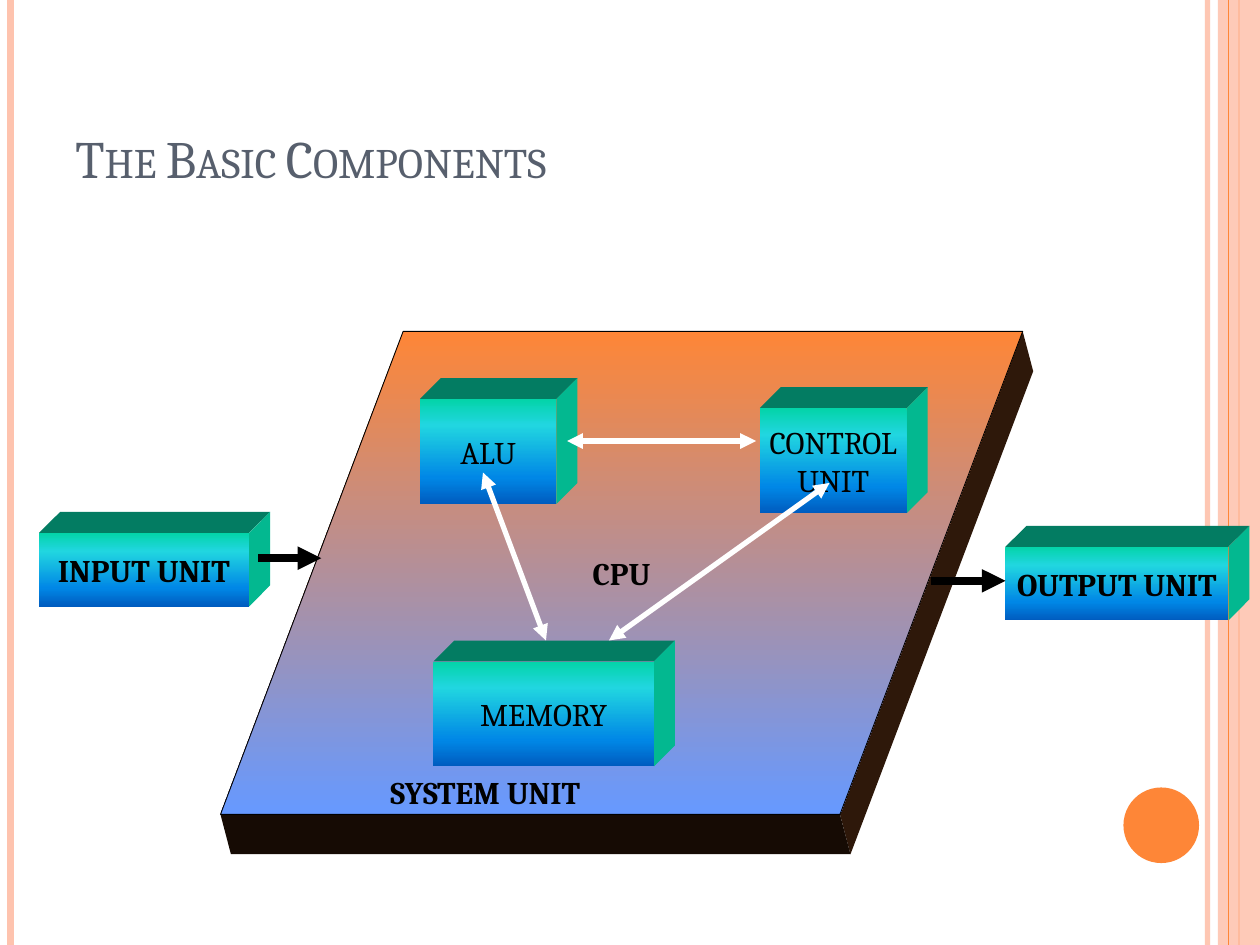
from dataclasses import dataclass

from lxml import etree
from pptx import Presentation
from pptx.dml.color import RGBColor
from pptx.enum.shapes import MSO_CONNECTOR, MSO_SHAPE
from pptx.enum.text import MSO_ANCHOR, PP_ALIGN
from pptx.oxml.ns import qn
from pptx.util import Inches, Pt

STRAIGHT = MSO_CONNECTOR.STRAIGHT
RECTANGLE, OVAL = MSO_SHAPE.RECTANGLE, MSO_SHAPE.OVAL
MIDDLE, BOTTOM, TOP = MSO_ANCHOR.MIDDLE, MSO_ANCHOR.BOTTOM, MSO_ANCHOR.TOP
LEFT, CENTER = PP_ALIGN.LEFT, PP_ALIGN.CENTER
COLUMNS, ROWS = 120, 90
SLIDE_WIDTH, SLIDE_HEIGHT = Inches(10), Inches(7.5)


@dataclass(frozen=True)
class Theme:
    """Colours, gradients and type sizes of the slide."""
    font: str = "Cambria"
    title_size: int = 30
    label_size: int = 18
    title: str = "575F6D"
    ink: str = "000000"
    link: str = "FFFFFF"
    accent: str = "FE8637"
    pale: str = "FEC3AE"
    block_front: tuple = ((0, "03D4A8"), (25, "21D6E0"), (75, "0087E6"), (100, "005CBF"))
    block_top: str = "037C62"
    block_side: str = "03B890"
    platform_face: tuple = ((0, "FE8637"), (100, "6699FF"))
    platform_side: str = "2E180A"
    platform_front: str = "160B04"


THEME = Theme()


def across(columns):
    """Convert grid columns to a slide length."""
    return round(SLIDE_WIDTH * columns / COLUMNS)


def down(rows):
    """Convert grid rows to a slide length."""
    return round(SLIDE_HEIGHT * rows / ROWS)


def place(box):
    """Convert a grid box to left, top, width and height."""
    left, top, width, height = box
    return across(left), down(top), across(width), down(height)


def set_alpha(properties, percent):
    """Make the first colour inside the properties partly transparent."""
    color = next(properties.iter(qn("a:srgbClr")))
    etree.SubElement(color, qn("a:alpha"), val=str(percent * 1000))


def paint(shape, fill, outline=None):
    """Fill a shape with a colour or vertical gradient, without shadow."""
    shape.shadow.inherit = False
    if isinstance(fill, str):
        shape.fill.solid()
        shape.fill.fore_color.rgb = RGBColor.from_string(fill)
    else:
        shape.fill.gradient()
        shape.fill.gradient_angle = 270
        stops = next(shape.element.spPr.iter(qn("a:gsLst")))
        for stop in list(stops):
            stops.remove(stop)
        for position, color in fill:
            stop = etree.SubElement(stops, qn("a:gs"), pos=str(position * 1000))
            etree.SubElement(stop, qn("a:srgbClr"), val=color)
    if outline:
        shape.line.color.rgb = RGBColor.from_string(outline)
        shape.line.width = Pt(0.5)
    else:
        shape.line.fill.background()


def write(shape, text, size, color, bold=False, align=CENTER, anchor=MIDDLE, wrap=False):
    """Put formatted text into a shape."""
    frame = shape.text_frame
    frame.text = text
    frame.word_wrap = wrap
    frame.vertical_anchor = anchor
    for paragraph in frame.paragraphs:
        paragraph.alignment = align
        for run in paragraph.runs:
            run.font.name = THEME.font
            run.font.size = Pt(size)
            run.font.bold = bold
            run.font.color.rgb = RGBColor.from_string(color)


def add_polygon(slide, points, fill, outline=None):
    """Draw a closed outline through grid points."""
    corners = [(across(x), down(y)) for x, y in points]
    builder = slide.shapes.build_freeform(*corners[0])
    builder.add_line_segments(corners[1:], close=True)
    shape = builder.convert_to_shape()
    paint(shape, fill, outline)
    return shape


def add_line(slide, start, end, color, width, arrows=()):
    """Draw a straight line with triangles at the named ends."""
    line = slide.shapes.add_connector(
        STRAIGHT, across(start[0]), down(start[1]), across(end[0]), down(end[1]))
    line.line.color.rgb = RGBColor.from_string(color)
    line.line.width = Pt(width)
    properties = line.line._get_or_add_ln()
    for arrow in arrows:
        etree.SubElement(properties, qn(f"a:{arrow}"), type="triangle")
    etree.SubElement(line.element.spPr, qn("a:effectLst"))
    return line


def add_decoration(slide, box):
    """Draw the vertical stripes and the disc at the slide edges."""
    left, top, width, height = box

    def stripe(column, color, weight):
        return add_line(slide, (left + column, top), (left + column, top + height), color, weight)

    set_alpha(stripe(115, THEME.pale, 3).element.spPr, 93)
    stripe(1, THEME.pale, 4.5)
    stripe(118, THEME.accent, 1.5)
    band = slide.shapes.add_shape(RECTANGLE, *place((left + width - 4, top, 4, height)))
    paint(band, THEME.pale)
    set_alpha(band.element.spPr, 87)
    stripe(117, THEME.accent, 0.75)
    disc = slide.shapes.add_shape(OVAL, *place((left + 107, top + 75, 7.2, 7.2)))
    paint(disc, THEME.accent)


def add_title(slide, box, text):
    """Write the title in small capitals at the foot of its box."""
    title = slide.shapes.add_textbox(*place(box))
    write(title, text, THEME.title_size, THEME.title, align=LEFT, anchor=BOTTOM, wrap=True)
    for run in title.text_frame.paragraphs[0].runs:
        run.font._element.set("cap", "small")


def add_block(slide, box, text, bold=False, depth=2):
    """Draw a labelled block with its top and right side in relief."""
    left, top, width, height = box
    right, bottom = left + width, top + height
    add_polygon(slide, [(left, top), (left + depth, top - depth),
                        (right + depth, top - depth), (right, top)], THEME.block_top)
    add_polygon(slide, [(right, top), (right + depth, top - depth),
                        (right + depth, bottom - depth), (right, bottom)], THEME.block_side)
    front = slide.shapes.add_shape(RECTANGLE, *place(box))
    paint(front, THEME.block_front)
    write(front, text, THEME.label_size, THEME.ink, bold)


def add_platform(slide, box, text, slant=17.4, shift=1, depth=3.8):
    """Draw the slanted system board with its two visible edges."""
    left, top, width, height = box
    right, bottom = left + width, top + height
    add_polygon(slide, [(right, top), (right + shift, top + depth),
                        (right - slant + shift, bottom + depth), (right - slant, bottom)],
                THEME.platform_side)
    add_polygon(slide, [(left, bottom), (right - slant, bottom),
                        (right - slant + shift, bottom + depth), (left + shift, bottom + depth)],
                THEME.platform_front)
    face = add_polygon(slide, [(left + slant, top), (right, top), (right - slant, bottom),
                               (left, bottom)], THEME.platform_face, THEME.ink)
    write(face, text, THEME.label_size, THEME.ink, bold=True)


def add_caption(slide, box, text):
    """Write a bold caption at the top left of its box."""
    caption = slide.shapes.add_textbox(*place(box))
    write(caption, text, THEME.label_size, THEME.ink, True, LEFT, TOP, True)


def main():
    """Build and save the slide."""
    presentation = Presentation()
    presentation.slide_width, presentation.slide_height = SLIDE_WIDTH, SLIDE_HEIGHT
    slide = presentation.slides.add_slide(presentation.slide_layouts[6])
    add_decoration(slide, (0, 0, COLUMNS, ROWS))
    add_title(slide, (6, 3.6, 98, 15), "The Basic Components")
    add_block(slide, (3.72, 50.76, 20, 7), "INPUT UNIT", bold=True)
    add_block(slide, (95.76, 52.08, 21.24, 7), "OUTPUT UNIT", bold=True)
    add_platform(slide, (21, 31.56, 76.4, 46), "CPU")
    for start, end in (((24.6, 53.16), (30.6, 53.16)), ((88.68, 55.32), (95.76, 55.32))):
        add_line(slide, start, end, THEME.ink, 4.5, ["tailEnd"])
    add_block(slide, (40, 38, 13, 10), "ALU")
    add_block(slide, (72.36, 38.88, 14, 10), "CONTROL\nUNIT")
    add_block(slide, (41.28, 63, 21, 10), "MEMORY")
    add_caption(slide, (36, 73, 36, 4.8), "SYSTEM UNIT")
    for start, end in (((79, 46), (58, 61)), ((46, 45), (52, 61)), ((54, 42), (72, 42))):
        add_line(slide, start, end, THEME.link, 3, ["headEnd", "tailEnd"])
    presentation.save("out.pptx")


if __name__ == "__main__":
    main()
